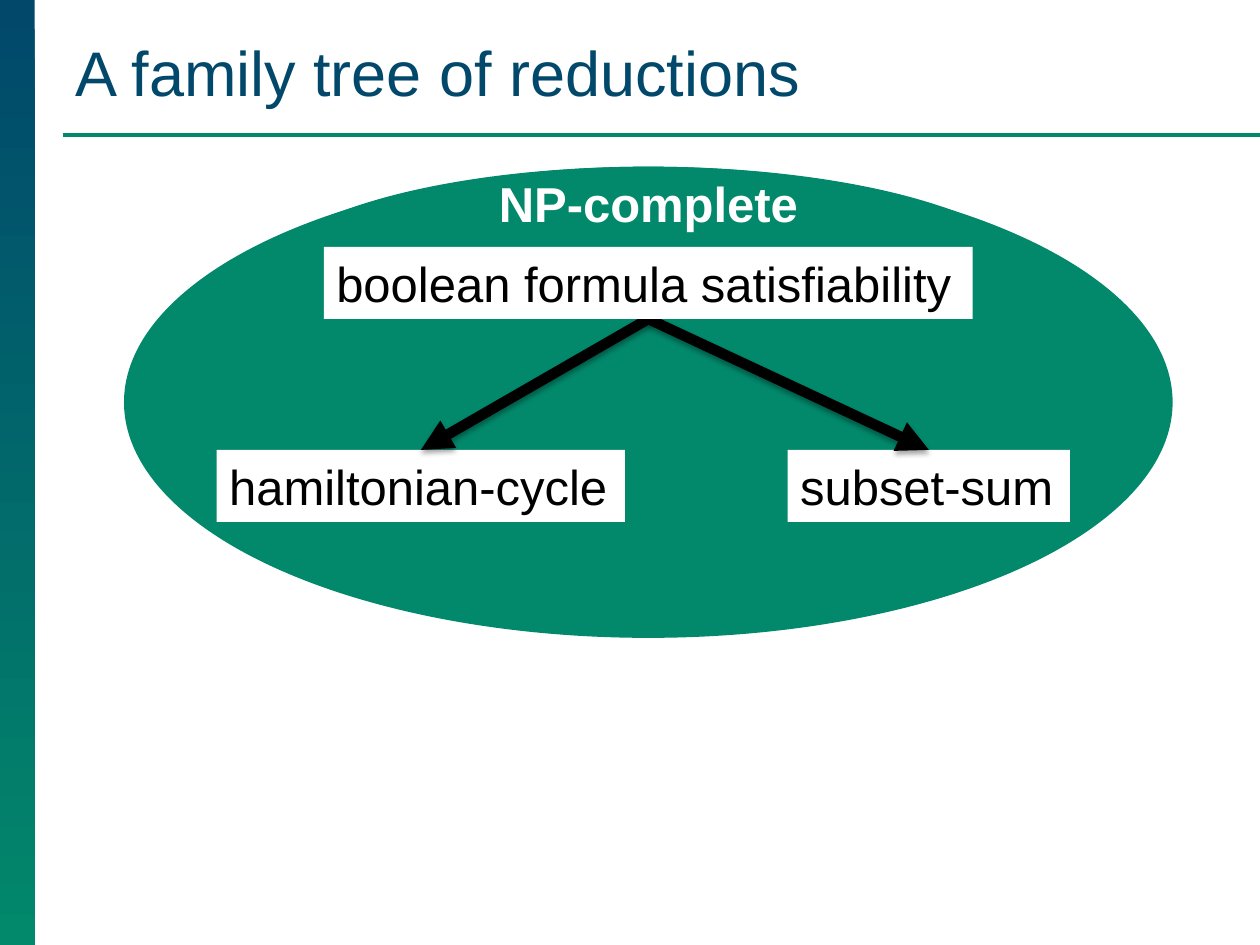
import pptx
import pptx.util
import pptx.dml.color
import pptx.enum.dml
import pptx.enum.shapes
import pptx.enum.text
import pptx.oxml
import pptx.oxml.ns

Cm, Pt = pptx.util.Cm, pptx.util.Pt
RGBColor = pptx.dml.color.RGBColor
MSO_SHAPE = pptx.enum.shapes.MSO_SHAPE
STRAIGHT = pptx.enum.shapes.MSO_CONNECTOR.STRAIGHT
PP_ALIGN = pptx.enum.text.PP_ALIGN
MSO_ANCHOR = pptx.enum.text.MSO_ANCHOR

NAVY = RGBColor(0x01, 0x48, 0x6B)
GREEN = RGBColor(0x02, 0x88, 0x6B)
WHITE = RGBColor(0xFF, 0xFF, 0xFF)
BLACK = RGBColor(0, 0, 0)
FONT = "Arial"

# Content; all lengths in centimetres
TITLE = "A family tree of reductions"
CLASS_LABEL = ("NP-complete", 6.63)  # text, box width
ROOT = ("boolean formula satisfiability", 6.53, 4.98, 13.08)  # text, left, top, width
CHILDREN = [
    ("hamiltonian-cycle", 4.37, 9.07, 8.23),
    ("subset-sum", 15.88, 9.07, 5.69),
]
ELLIPSES = [(2.54, 3.4, 21.06, 9.42), (5.13, 3.4, 15.88, 4.85)]
SLIDE_WIDTH, SLIDE_HEIGHT = 25.4, 19.05
BOX_HEIGHT = 1.45

SHADOW = (
    '<a:effectLst xmlns:a="http://schemas.openxmlformats.org/drawingml/2006/main">'
    '<a:outerShdw blurRad="39370" dist="22860" dir="5400000" rotWithShape="0">'
    '<a:srgbClr val="000000"><a:alpha val="35000"/></a:srgbClr>'
    "</a:outerShdw></a:effectLst>"
)
NO_EFFECT = '<a:effectLst xmlns:a="http://schemas.openxmlformats.org/drawingml/2006/main"/>'
ARROWHEAD = (
    '<a:tailEnd xmlns:a="http://schemas.openxmlformats.org/drawingml/2006/main" type="triangle"/>'
)


def style_text(paragraph, size, color, bold=False):
    paragraph.font.name = FONT
    paragraph.font.size = Pt(size)
    paragraph.font.color.rgb = color
    paragraph.font.bold = bold


def add_label(slide, text, left, top, width, color=BLACK, fill=None):
    box = slide.shapes.add_textbox(Cm(left), Cm(top), Cm(width), Cm(BOX_HEIGHT))
    if fill is not None:
        box.fill.solid()
        box.fill.fore_color.rgb = fill
    box.text_frame.word_wrap = True
    paragraph = box.text_frame.paragraphs[0]
    paragraph.text = text
    return paragraph, color


def add_line(slide, start, end, color, width, effect):
    line = slide.shapes.add_connector(STRAIGHT, *(Cm(value) for value in start + end))
    line.line.color.rgb = color
    line.line.width = Pt(width)
    line._element.spPr.append(pptx.oxml.parse_xml(effect))
    return line


def add_problem(slide, problem):
    paragraph, color = add_label(slide, *problem, fill=WHITE)
    style_text(paragraph, 28, color)


presentation = pptx.Presentation()
presentation.slide_width, presentation.slide_height = Cm(SLIDE_WIDTH), Cm(SLIDE_HEIGHT)
slide = presentation.slides.add_slide(presentation.slide_layouts[5])

# Side band and title rule
band = slide.shapes.add_shape(MSO_SHAPE.RECTANGLE, 0, 0, Cm(0.7), Cm(SLIDE_HEIGHT))
band.shadow.inherit = False
band.line.fill.background()
band.fill.gradient()
band.fill.gradient_angle = 270
for stop, position, color in zip(band.fill.gradient_stops, (0, 1), (NAVY, GREEN)):
    stop.position = position
    stop.color.rgb = color
add_line(slide, (1.27, 2.72), (SLIDE_WIDTH, 2.72), GREEN, 2.25, NO_EFFECT)

# Title
title = slide.shapes.title
title.left, title.top, title.width, title.height = Cm(1.27), Cm(0.53), Cm(23.57), Cm(1.8)
title.text_frame.text = TITLE
title.text_frame.vertical_anchor = MSO_ANCHOR.BOTTOM
title.text_frame.auto_size = pptx.enum.text.MSO_AUTO_SIZE.NONE
title.text_frame.paragraphs[0].alignment = PP_ALIGN.LEFT
style_text(title.text_frame.paragraphs[0], 36, NAVY)

# Complexity class
for bounds in ELLIPSES:
    ellipse = slide.shapes.add_shape(MSO_SHAPE.OVAL, *(Cm(value) for value in bounds))
    ellipse.shadow.inherit = False
    ellipse.fill.solid()
    ellipse.fill.fore_color.rgb = GREEN
    ellipse.line.color.rgb = GREEN
    ellipse.line.width = Pt(2.25)
class_text, class_width = CLASS_LABEL
root_center = ROOT[1] + ROOT[3] / 2
paragraph, color = add_label(
    slide, class_text, root_center - class_width / 2, 3.38, class_width, WHITE
)
paragraph.alignment = PP_ALIGN.CENTER
style_text(paragraph, 28, color, bold=True)

# Reductions: children, arrows from the root, then the root on top
for child in CHILDREN:
    add_problem(slide, child)
for text, left, top, width in CHILDREN:
    start = (root_center, ROOT[2] + BOX_HEIGHT)
    arrow = add_line(slide, start, (left + width / 2, top), BLACK, 6, SHADOW)
    arrow.line._get_or_add_ln().append(pptx.oxml.parse_xml(ARROWHEAD))
add_problem(slide, ROOT)

presentation.save("out.pptx")
